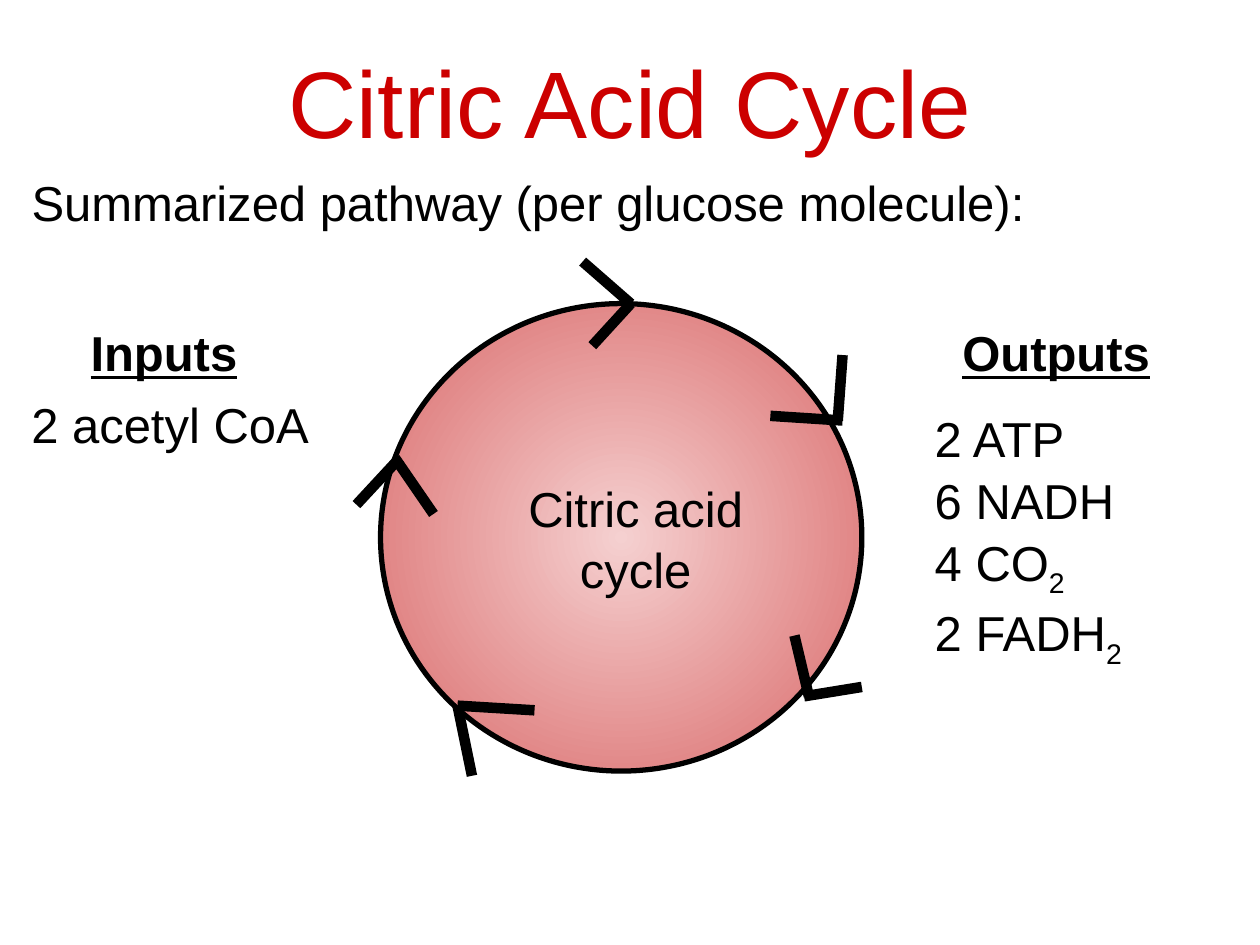
import pptx
import pptx.util
import pptx.dml.color
import pptx.enum.shapes
import pptx.enum.text
import pptx.oxml
import pptx.oxml.ns
import lxml.etree

COLUMNS, ROWS = 100, 75
CELL = pptx.util.Inches(0.1)
CENTER = pptx.enum.text.PP_ALIGN.CENTER
LEFT = pptx.enum.text.PP_ALIGN.LEFT
BLACK, RED = "000000", "CC0000"
ROSE_CENTER, ROSE_RIM = "F5D0D0", "D96868"

ARROWHEADS = [
    [((0.52, 0), (0.42, -0.09)), ((0.52, 0), (0.44, 0.09))],
    [((0.95, 0.25), (0.96, 0.11)), ((0.96, 0.25), (0.81, 0.24))],
    [((0.88, 0.84), (1, 0.82)), ((0.89, 0.84), (0.86, 0.71))],
    [((0.16, 0.86), (0.32, 0.87)), ((0.19, 1.01), (0.16, 0.86))],
    [((0.03, 0.33), (0.11, 0.45)), ((-0.05, 0.43), (0.04, 0.33))],
]


def color(hex_string):
    return pptx.dml.color.RGBColor.from_string(hex_string)


def grid(*cells):
    return [round(cell * CELL) for cell in cells]


def part_of(box, x, y, width, height):
    left, top, box_width, box_height = box
    return (left + x * box_width, top + y * box_height,
            width * box_width, height * box_height)


def write(frame, lines, size=28, ink=BLACK, align=LEFT, spacing=1.05, heading=False):
    frame.word_wrap = True
    frame.auto_size = pptx.enum.text.MSO_AUTO_SIZE.NONE
    frame.vertical_anchor = pptx.enum.text.MSO_ANCHOR.TOP
    frame.margin_left = frame.margin_right = CELL
    frame.margin_top = frame.margin_bottom = CELL
    for index, line in enumerate(lines):
        paragraph = frame.add_paragraph() if index else frame.paragraphs[0]
        paragraph.alignment = align
        paragraph.line_spacing = spacing
        paragraph.space_before = pptx.util.Pt(0)
        for position, words in enumerate(line):
            run = paragraph.add_run()
            run.text = words
            run.font.name = "Arial"
            run.font.size = pptx.util.Pt(size)
            run.font.color.rgb = color(ink)
            if heading:
                run.font.bold = run.font.underline = True
            if position:
                run.font._element.set("baseline", "-25000")


def fill_placeholder(placeholder, box, lines, **style):
    placeholder.left, placeholder.top, placeholder.width, placeholder.height = grid(*box)
    write(placeholder.text_frame, lines, **style)


def add_text(slide, box, lines, **style):
    write(slide.shapes.add_textbox(*grid(*box)).text_frame, lines, **style)


def add_header(slide, box):
    fill_placeholder(slide.shapes.title, part_of(box, 0.01, 0.08, 0.98, 0.42),
                     [["Citric Acid Cycle"]], size=54, ink=RED, align=CENTER, spacing=1.1)
    summary = slide.placeholders[1]
    fill_placeholder(summary, part_of(box, 0, 0.58, 0.96, 0.39),
                     [["Summarized pathway (per glucose molecule):"]], spacing=1.15)
    summary.text_frame.margin_top = pptx.util.Inches(0.14)
    paragraph = summary.text_frame.paragraphs[0]
    paragraph.space_after = pptx.util.Pt(16)
    properties = paragraph._p.get_or_add_pPr()
    properties.set("marL", "0")
    properties.set("indent", "0")
    lxml.etree.SubElement(properties, pptx.oxml.ns.qn("a:buNone"))


def fill_radially(shape, center, rim):
    shape.fill.gradient()
    for stop, shade in zip(shape.fill.gradient_stops, (center, rim)):
        stop.color.rgb = color(shade)
    direction = shape._element.spPr.find(".//" + pptx.oxml.ns.qn("a:lin"))
    radial = pptx.oxml.parse_xml(
        f'<a:path {pptx.oxml.ns.nsdecls("a")} path="circle">'
        '<a:fillToRect l="50000" t="50000" r="50000" b="50000"/></a:path>')
    direction.getparent().replace(direction, radial)


def add_stroke(slide, box, start, end):
    points = [part_of(box, x, y, 0, 0)[:2] for x, y in (start, end)]
    stroke = slide.shapes.add_connector(
        pptx.enum.shapes.MSO_CONNECTOR.STRAIGHT, *grid(*points[0], *points[1]))
    stroke.line.color.rgb = color(BLACK)
    stroke.line.width = pptx.util.Pt(6)
    lxml.etree.SubElement(stroke._element.spPr, pptx.oxml.ns.qn("a:effectLst"))


def add_cycle(slide, box):
    circle = slide.shapes.add_shape(pptx.enum.shapes.MSO_SHAPE.OVAL, *grid(*box))
    circle.shadow.inherit = False
    fill_radially(circle, ROSE_CENTER, ROSE_RIM)
    circle.line.color.rgb = color(BLACK)
    circle.line.width = pptx.util.Pt(3)
    add_text(slide, part_of(box, 0.25, 0.34, 0.56, 0.32),
             [["Citric acid cycle"]], align=CENTER)
    for arrowhead in ARROWHEADS:
        for start, end in arrowhead:
            add_stroke(slide, box, start, end)


def add_substances(slide, box, heading, heading_indent, heading_gap, substances):
    left, top, width, height = box
    add_text(slide, (left + heading_indent, top, width - heading_indent, 5),
             [[heading]], heading=True)
    add_text(slide, (left, top + heading_gap, width, height - heading_gap), substances)


def main():
    deck = pptx.Presentation()
    deck.slide_width, deck.slide_height = grid(COLUMNS, ROWS)
    slide = deck.slides.add_slide(deck.slide_layouts[1])
    add_header(slide, (1.5, 0, 97, 20))
    add_cycle(slide, (30.2, 24.1, 38.2, 37.1))
    add_substances(slide, (1.5, 24.4, 26.8, 33.7), "Inputs", 4.7, 5.7, [["2 acetyl CoA"]])
    add_substances(slide, (73.2, 24.4, 26.8, 34.8), "Outputs", 2.2, 6.8,
                   [["2 ATP"], ["6 NADH"], ["4 CO", "2"], ["2 FADH", "2"]])
    deck.save("out.pptx")


if __name__ == "__main__":
    main()
